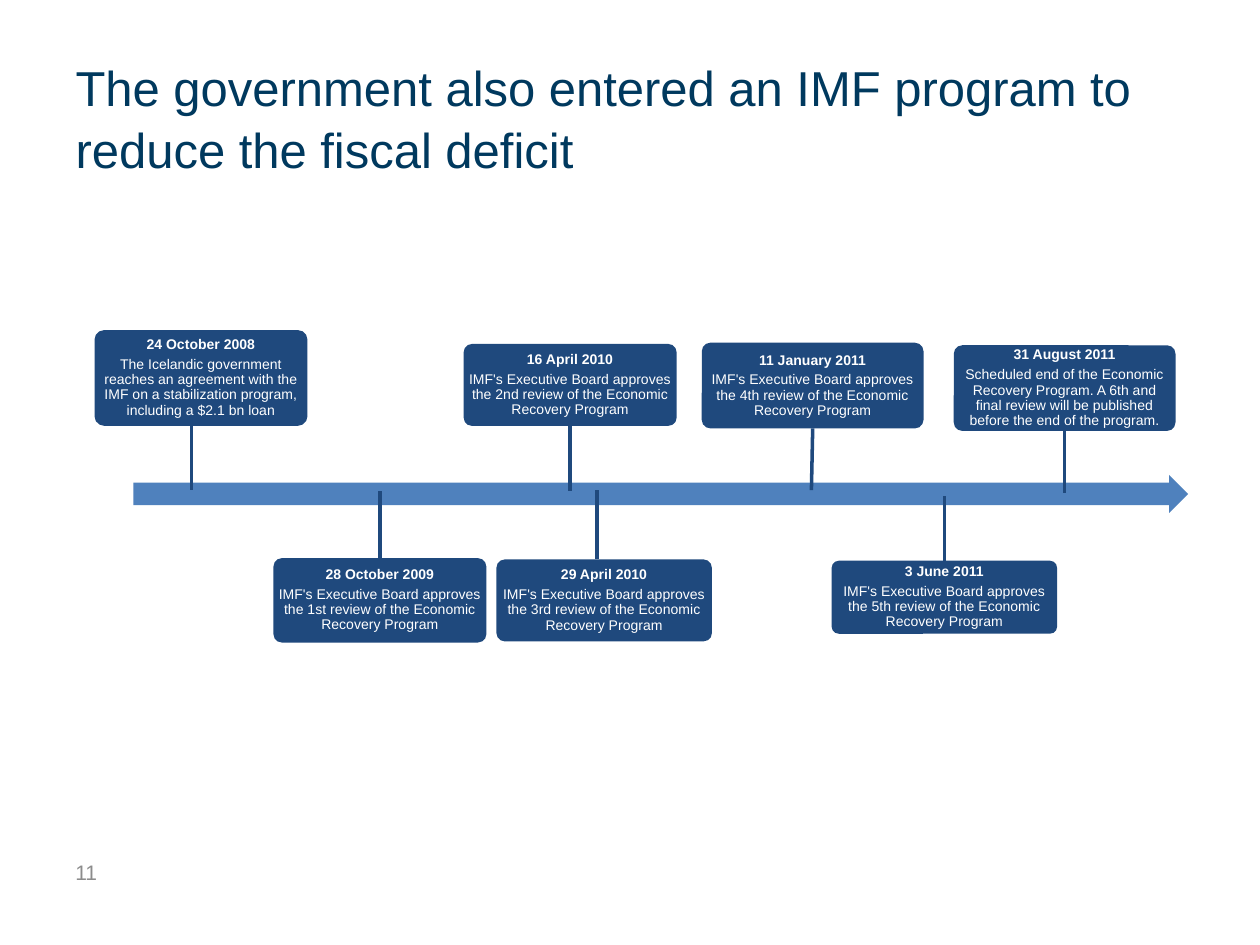
import pptx
import pptx.dml.color
import pptx.enum.shapes
import pptx.enum.text
import pptx.util
import pptx.oxml

Inches = pptx.util.Inches
Pt = pptx.util.Pt
SHAPE = pptx.enum.shapes.MSO_SHAPE
ALIGN = pptx.enum.text.PP_ALIGN
MIDDLE = pptx.enum.text.MSO_ANCHOR.MIDDLE
NAVY, BLUE, WHITE = "1F497D", "4F81BD", "FFFFFF"
REVIEW = "IMF's Executive Board approves the {} review of the Economic Recovery Program"

# Each event: box, tip height, stem position (None for the middle), tip shift, date, text
EVENTS = [
    ((0.75, 2.62, 1.69, 0.76), 3.89, 1.52, 0, "24 October 2008",
     "The Icelandic government reaches an agreement with the IMF on a "
     "stabilization program, including a $2.1 bn loan"),
    ((2.17, 4.43, 1.69, 0.67), 3.9, None, 0, "28 October 2009", REVIEW.format("1st")),
    ((3.68, 2.73, 1.69, 0.65), 3.9, None, 0, "16 April 2010", REVIEW.format("2nd")),
    ((3.94, 4.44, 1.71, 0.65), 3.89, 4.74, 0, "29 April 2010", REVIEW.format("3rd")),
    ((5.57, 2.72, 1.76, 0.68), 3.89, None, -0.01, "11 January 2011", REVIEW.format("4th")),
    ((6.6, 4.45, 1.79, 0.58), 3.94, None, 0, "3 June 2011", REVIEW.format("5th")),
    ((7.57, 2.74, 1.76, 0.68), 3.91, None, 0, "31 August 2011",
     "Scheduled end of the Economic Recovery Program. A 6th and final review "
     "will be published before the end of the program."),
]


def color(value):
    """Turn a hex string into a colour."""
    return pptx.dml.color.RGBColor.from_string(value)


def style(font, size, value, bold=False):
    """Format a font."""
    font.name = "Arial"
    font.size = Pt(size)
    font.bold = bold
    font.color.rgb = color(value)


def add_block(slide, kind, box, fill):
    """Add a flat filled shape without outline."""
    block = slide.shapes.add_shape(kind, *map(Inches, box))
    block.shadow.inherit = False
    block.fill.solid()
    block.fill.fore_color.rgb = color(fill)
    block.line.fill.background()
    return block


def add_title(slide, box, text):
    """Place and format the title."""
    title = slide.shapes.title
    title.left, title.top, title.width, title.height = map(Inches, box)
    frame = title.text_frame
    frame.text = text
    frame.auto_size = pptx.enum.text.MSO_AUTO_SIZE.NONE
    frame.vertical_anchor = MIDDLE
    para = frame.paragraphs[0]
    para.alignment = ALIGN.LEFT
    para.line_spacing = 1.05
    style(para.runs[0].font, 28, "00395E")


def add_number(slide, box, text):
    """Add the page number."""
    frame = slide.shapes.add_textbox(*map(Inches, box)).text_frame
    frame.word_wrap = True
    frame.vertical_anchor = MIDDLE
    frame.text = text
    style(frame.paragraphs[0].runs[0].font, 12, "8C8C8C")


def add_card(slide, box, date, text):
    """Add a rounded card with a bold date above its text."""
    card = add_block(slide, SHAPE.ROUNDED_RECTANGLE, box, NAVY)
    card.adjustments[0] = 0.1
    frame = card.text_frame
    frame.word_wrap = True
    frame.vertical_anchor = MIDDLE
    frame.margin_left = frame.margin_right = Inches(0.02)
    frame.margin_top = frame.margin_bottom = Inches(0.02)
    frame.text = f"{date}\n{text}"
    for index, para in enumerate(frame.paragraphs):
        para.alignment = ALIGN.CENTER
        para.line_spacing = 0.9
        para.space_after = Pt(2.8)
        style(para.runs[0].font, 8, WHITE, bold=index == 0)
    return card


def add_event(slide, box, tip, stem, shift, date, text):
    """Add a card and the stem that ties it to the time arrow."""
    left, top, width, height = box
    card = add_card(slide, box, date, text)
    above = top < tip
    edge = top + height if above else top
    x = left + width / 2 if stem is None else stem
    line = slide.shapes.add_connector(
        pptx.enum.shapes.MSO_CONNECTOR.STRAIGHT,
        Inches(x), Inches(edge), Inches(x + shift), Inches(tip))
    if stem is None:
        line.begin_connect(card, 2 if above else 0)
    line.line.color.rgb = color(NAVY)
    line.line.width = Pt(2)
    props = line._element.spPr
    props.append(pptx.oxml.parse_xml(
        '<a:effectLst xmlns:a="http://schemas.openxmlformats.org/drawingml/2006/main"/>'))


def add_timeline(slide, box, events):
    """Add the time arrow and its events."""
    arrow = add_block(slide, SHAPE.RIGHT_ARROW, box, BLUE)
    arrow.adjustments[0] = 0.6
    arrow.adjustments[1] = 0.5
    for event in events:
        add_event(slide, *event)


def main():
    """Build and save the slide."""
    deck = pptx.Presentation()
    deck.slide_width, deck.slide_height = Inches(10), Inches(7.5)
    slide = deck.slides.add_slide(deck.slide_layouts[5])
    add_title(slide, (0.5, 0.3, 9, 1.25),
              "The government also entered an IMF program to reduce the fiscal deficit")
    add_timeline(slide, (1.06, 3.77, 8.37, 0.3), EVENTS)
    add_number(slide, (0.5, 6.72, 2.33, 0.4), "11")
    deck.save("out.pptx")


if __name__ == "__main__":
    main()
